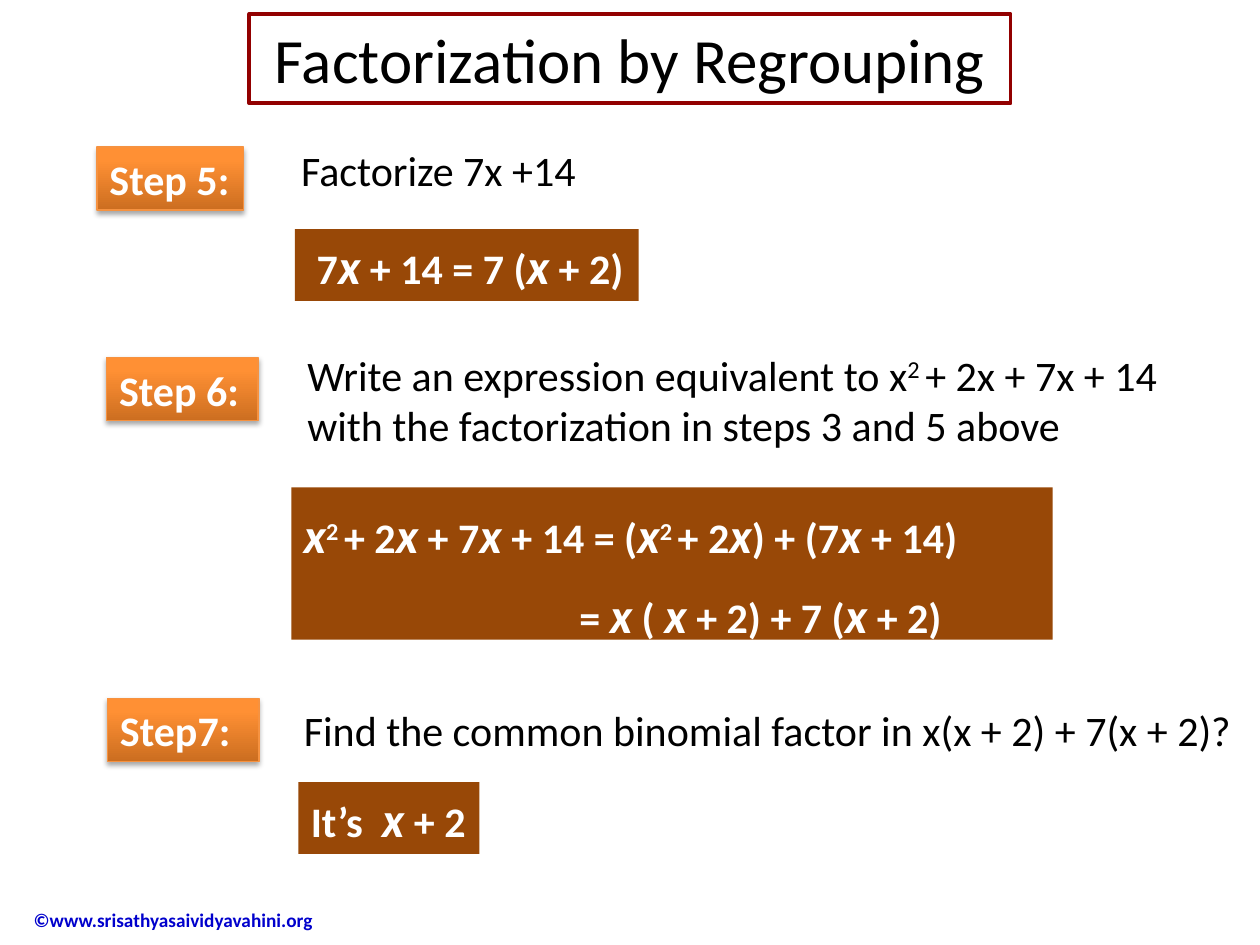
from lxml import etree
from pptx import Presentation
from pptx.dml.color import RGBColor
from pptx.enum.shapes import MSO_SHAPE
from pptx.enum.text import MSO_ANCHOR, PP_ALIGN
from pptx.oxml.ns import qn
from pptx.util import Pt

RECT = MSO_SHAPE.RECTANGLE
TOP, MIDDLE = MSO_ANCHOR.TOP, MSO_ANCHOR.MIDDLE
LEFT, CENTER, JUSTIFY = PP_ALIGN.LEFT, PP_ALIGN.CENTER, PP_ALIGN.JUSTIFY

BLACK = RGBColor(0x00, 0x00, 0x00)
WHITE = RGBColor(0xFF, 0xFF, 0xFF)
BLUE = RGBColor(0x00, 0x00, 0xCC)
BROWN = RGBColor(0x98, 0x48, 0x07)
RED = RGBColor(0x92, 0x00, 0x00)
EDGE = RGBColor(0xF6, 0x92, 0x40)
DARK = RGBColor(0xCC, 0x6E, 0x20)
LIGHT = RGBColor(0xFF, 0x90, 0x34)

PLAIN = {"name": "Calibri", "size": Pt(24), "bold": False}
BOLD = {**PLAIN, "bold": True}
TITLE = {**PLAIN, "size": Pt(36)}
SMALL = {**BOLD, "size": Pt(11)}
VAR = {"size": Pt(28), "italic": True}


def apply(item, values):
    for key, value in values.items():
        setattr(item, key, value)


def write(para, text, style, color):
    """Add runs split at |: a lone x is a variable, a lone 2 an exponent."""
    for piece in text.split("|"):
        run = para.add_run()
        run.text = piece
        apply(run.font, {**style, **VAR} if piece == "x" else style)
        run.font.color.rgb = color
        if piece.strip() == "2":
            run.font._element.set("baseline", "30000")


def fill_text(shape, lines, style, color, align=LEFT, wrap=True):
    frame = shape.text_frame
    apply(frame, {"word_wrap": wrap, "vertical_anchor": TOP})
    for i, line in enumerate(lines):
        para = frame.paragraphs[0] if i == 0 else frame.add_paragraph()
        para.alignment = align
        write(para, line, style, color)
    return frame


def add_note(slide, box, text, style=PLAIN, color=BLACK):
    shape = slide.shapes.add_textbox(*map(Pt, box))
    return fill_text(shape, [text], style, color)


def add_rect(slide, box):
    shape = slide.shapes.add_shape(RECT, *map(Pt, box))
    shape.shadow.inherit = False
    return shape


def add_title(slide, box, text):
    shape = add_rect(slide, box)
    shape.fill.background()
    shape.line.color.rgb = RED
    shape.line.width = Pt(2.25)
    fill_text(shape, [text], TITLE, BLACK, CENTER, wrap=False)


def add_shadow(shape):
    effects = shape._element.spPr.find(qn("a:effectLst"))
    outer = etree.SubElement(effects, qn("a:outerShdw"), blurRad=str(Pt(3.1)),
                             dist=str(Pt(1.8)), dir="5400000", rotWithShape="0")
    color = etree.SubElement(outer, qn("a:srgbClr"), val="000000")
    etree.SubElement(color, qn("a:alpha"), val="35000")


def add_step(slide, box, text):
    shape = add_rect(slide, box)
    shape.fill.gradient()
    shape.fill.gradient_angle = 90
    stops = zip(shape.fill.gradient_stops, (0, 0.8), (DARK, LIGHT))
    for stop, place, color in stops:
        stop.position = place
        stop.color.rgb = color
    shape.line.color.rgb = EDGE
    shape.line.width = Pt(0.75)
    add_shadow(shape)
    fill_text(shape, [text], BOLD, WHITE, wrap=False)


def add_math(slide, box, lines, align=LEFT, wrap=False):
    shape = add_rect(slide, box)
    shape.fill.solid()
    shape.fill.fore_color.rgb = BROWN
    shape.line.fill.background()
    return fill_text(shape, lines, BOLD, WHITE, align, wrap)


def main():
    deck = Presentation()
    deck.slide_width, deck.slide_height = Pt(720), Pt(540)
    slide = deck.slides.add_slide(deck.slide_layouts[6])

    # Copyright line
    foot = add_note(slide, (-24, 511, 217.5, 29.5),
                    "©www.srisathyasaividyavahini.org", SMALL, BLUE)
    apply(foot, {"margin_left": Pt(43.2), "vertical_anchor": MIDDLE})

    # Title
    add_title(slide, (142.5, 8, 435, 51), "Factorization by Regrouping")

    # Step 5
    add_step(slide, (55.5, 84, 83.5, 36), "Step 5:")
    add_note(slide, (165, 79, 194.5, 36), "Factorize 7x +14")
    add_math(slide, (168.5, 131, 196.5, 41), [" 7|x| + 14 = 7 (|x| + 2)"])

    # Step 6
    add_step(slide, (61, 204.5, 86.5, 36), "Step 6:")
    add_note(slide, (168.5, 196, 502.5, 65.5),
             "Write an expression equivalent to x|2 |+ 2x + 7x + 14 "
             "with the factorization in steps 3 and 5 above")
    proof = add_math(slide, (166.5, 278.5, 435, 87),
                     ["x|2 |+ 2|x| + 7|x| + 14 = (|x|2 |+ 2|x|) + (7|x| + 14)",
                      "= |x| ( |x| + 2) + 7 (|x| + 2)"], JUSTIFY, wrap=True)
    first, second = proof.paragraphs
    first.space_after = Pt(6)
    apply(second, {"space_before": Pt(6), "space_after": Pt(6)})
    second._p.get_or_add_pPr().set("marL", str(Pt(157.5)))
    proof.margin_top = Pt(9.6)

    # Step 7
    add_step(slide, (61.5, 399, 86.5, 36), "Step7:")
    add_note(slide, (166.5, 399, 552, 36),
             "Find the common binomial factor in x(x + 2) + 7(x + 2)?")
    add_math(slide, (170.5, 447, 103.5, 41), ["It’s  |x| + 2"])

    deck.save("out.pptx")


if __name__ == "__main__":
    main()
